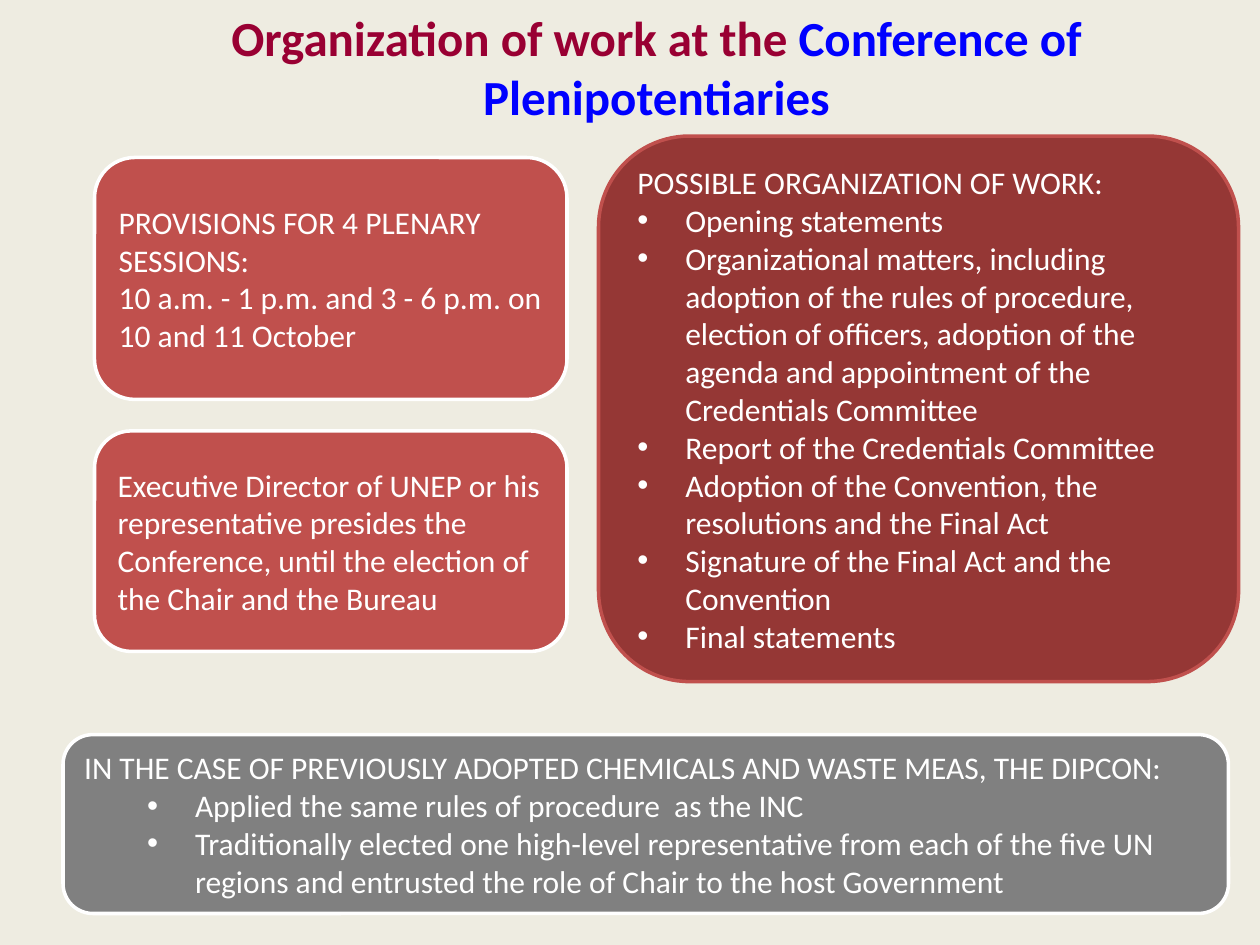
from pptx import Presentation
from pptx.dml.color import RGBColor
from pptx.enum.shapes import MSO_SHAPE as Shape
from pptx.enum.text import MSO_ANCHOR as Anchor, MSO_AUTO_SIZE as Fit, PP_ALIGN as Align
from pptx.oxml.ns import qn
from pptx.util import Inches, Pt
from lxml.etree import SubElement

COLORS = {
    "back": "EEECE1", "white": "FFFFFF", "wine": "990033", "blue": "0000FF",
    "red": "C0504D", "dark": "953735", "gray": "808080",
}
FONT = "Calibri"
HANG = 0.38

SESSIONS = [
    "PROVISIONS FOR 4 PLENARY SESSIONS:",
    "10 a.m. - 1 p.m. and 3 - 6 p.m. on 10 and 11 October",
]
CHAIR = [
    "Executive Director of UNEP or his representative presides the Conference, "
    "until the election of the Chair and the Bureau",
]
AGENDA = [
    "POSSIBLE ORGANIZATION OF WORK:",
    "Opening statements",
    "Organizational matters, including adoption of the rules of procedure, election of "
    "officers, adoption of the agenda and appointment of the Credentials Committee",
    "Report of the Credentials Committee",
    "Adoption of the Convention, the resolutions and the Final Act",
    "Signature of the Final Act and the Convention",
    "Final statements",
]
PAST = [
    "IN THE CASE OF PREVIOUSLY ADOPTED CHEMICALS AND WASTE MEAS, THE DIPCON:",
    "Applied the same rules of procedure  as the INC",
    "Traditionally elected one high-level representative from each of the five UN regions "
    "and entrusted the role of Chair to the host Government",
]


def color(name):
    return RGBColor.from_string(COLORS[name])


def add_run(para, text, size, tint, bold=False):
    run = para.add_run()
    run.text = text
    font = run.font
    font.name, font.size, font.bold = FONT, Pt(size), bold
    font.color.rgb = color(tint)


def indent(para, left, bullet):
    """Give a paragraph a hanging indent and, if asked, a bullet."""
    props = para._p.get_or_add_pPr()
    props.set("marL", str(Inches(left)))
    props.set("indent", str(-Inches(HANG)))
    if bullet:
        SubElement(props, qn("a:buFont")).set("typeface", "Arial")
        SubElement(props, qn("a:buChar")).set("char", "•")


def add_title(slide):
    title = slide.shapes.title
    title.left, title.top = Inches(1), Inches(0.22)
    title.width, title.height = Inches(8.42), Inches(0.62)
    frame = title.text_frame
    frame.word_wrap, frame.auto_size = True, Fit.NONE
    frame.vertical_anchor = Anchor.MIDDLE
    para = frame.paragraphs[0]
    para.alignment = Align.CENTER
    add_run(para, "Organization of work at the ", 28, "wine", True)
    add_run(para, "Conference of Plenipotentiaries", 28, "blue", True)


def add_panel(slide, kind, area, fill, line):
    panel = slide.shapes.add_shape(kind, *map(Inches, area))
    panel.shadow.inherit = False
    panel.fill.solid()
    panel.fill.fore_color.rgb = color(fill)
    panel.line.color.rgb = color(line)
    panel.line.width = Pt(2)
    frame = panel.text_frame
    frame.word_wrap = True
    frame.vertical_anchor = Anchor.MIDDLE
    return frame


def add_lines(frame, lines, level=None):
    """Write paragraphs; with a level, those after the first become bullets."""
    for i, text in enumerate(lines):
        para = frame.add_paragraph() if i else frame.paragraphs[0]
        para.alignment = Align.LEFT
        if level is not None:
            para.level = level if i else 0
            indent(para, HANG + 0.5 * para.level, i > 0)
        add_run(para, text, 18, "white")


def main():
    deck = Presentation()
    deck.slide_width, deck.slide_height = Inches(10), Inches(7.5)
    slide = deck.slides.add_slide(deck.slide_layouts[5])
    back = slide.background.fill
    back.solid()
    back.fore_color.rgb = color("back")

    add_title(slide)
    for top, height, lines in ((1.25, 1.92, SESSIONS), (3.42, 1.75, CHAIR)):
        area = (0.75, top, 3.75, height)
        add_lines(add_panel(slide, Shape.ROUNDED_RECTANGLE, area, "red", "white"), lines)
    area = (4.75, 1.08, 5.08, 4.33)
    add_lines(add_panel(slide, Shape.ROUNDED_RECTANGLE, area, "dark", "red"), AGENDA, 0)
    area = (0.5, 5.83, 9.25, 1.42)
    add_lines(add_panel(slide, Shape.FLOWCHART_ALTERNATE_PROCESS, area, "gray", "white"), PAST, 1)

    deck.save("out.pptx")


if __name__ == "__main__":
    main()
